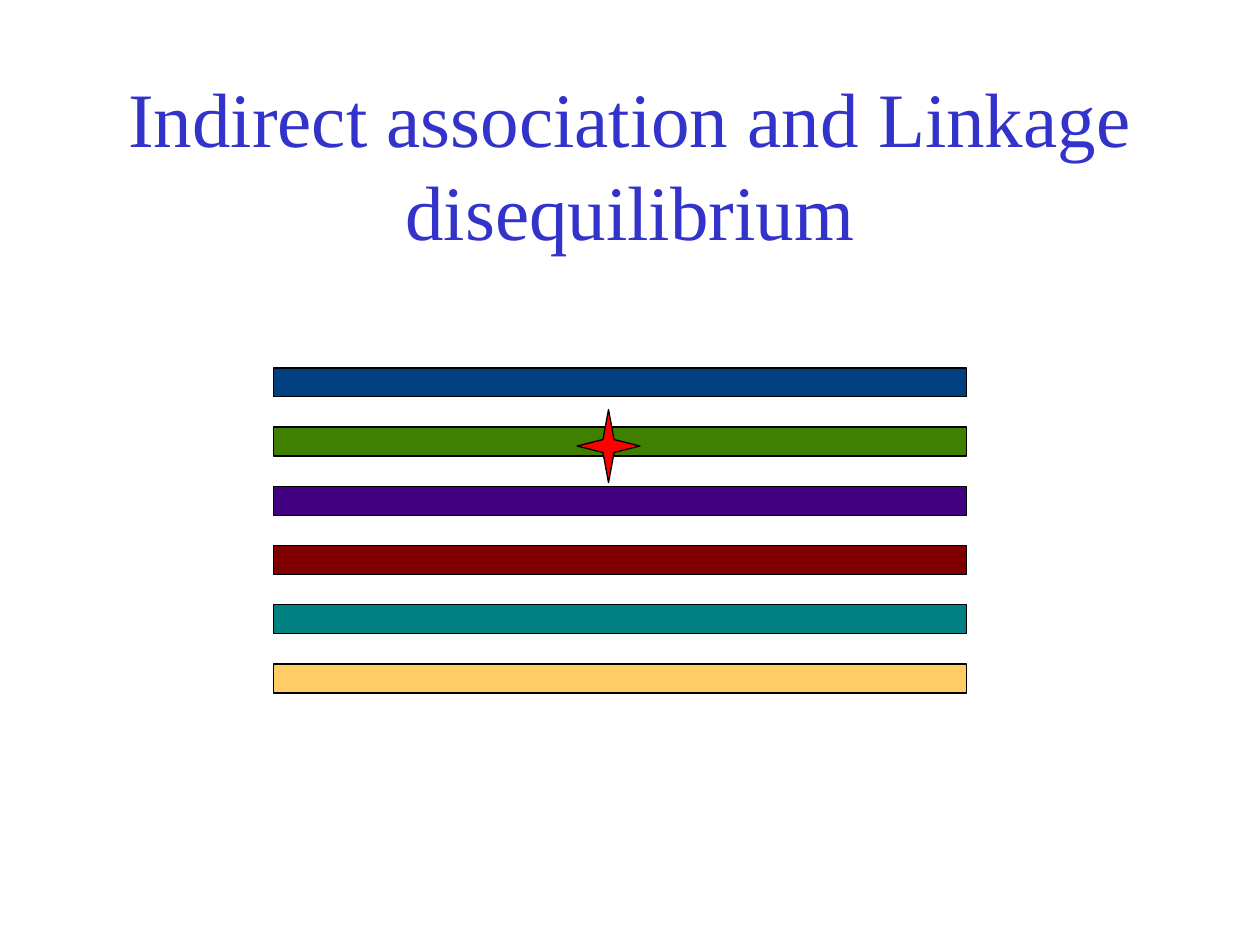
from dataclasses import dataclass

import pptx
import pptx.dml.color
import pptx.enum.shapes
import pptx.enum.text
import pptx.util

COLORS = {
    "title": "3333CC",
    "outline": "000000",
    "background": "FFFFFF",
    "blue": "004080",
    "green": "408000",
    "purple": "400080",
    "maroon": "800000",
    "teal": "008080",
    "yellow": "FFCC66",
    "mutation": "FF0000",
}
FONT = "Times New Roman"
BAR_LEFT, BAR_TOP = 2.17, 2.92
BAR_WIDTH, BAR_HEIGHT = 5.5, 0.23
ROW_PITCH = 0.47
HAPLOTYPES = ("blue", "green", "purple", "maroon", "teal", "yellow")
SHAPES = pptx.enum.shapes.MSO_SHAPE


@dataclass(frozen=True)
class Box:
    left: float
    top: float
    width: float
    height: float

    def lengths(self) -> list[pptx.util.Length]:
        return [pptx.util.Inches(value) for value in
                (self.left, self.top, self.width, self.height)]


def color(name: str) -> pptx.dml.color.RGBColor:
    return pptx.dml.color.RGBColor.from_string(COLORS[name])


def write_text(shape, text: str, *, size: float, color_name: str) -> None:
    frame = shape.text_frame
    frame.word_wrap = True
    frame.auto_size = pptx.enum.text.MSO_AUTO_SIZE.NONE
    frame.vertical_anchor = pptx.enum.text.MSO_ANCHOR.MIDDLE
    paragraph = frame.paragraphs[0]
    paragraph.alignment = pptx.enum.text.PP_ALIGN.CENTER
    paragraph.line_spacing = 1.0
    run = paragraph.add_run()
    run.text = text
    run.font.name = FONT
    run.font.size = pptx.util.Pt(size)
    run.font.color.rgb = color(color_name)


def draw_shape(slide, kind: SHAPES, box: Box, fill: str):
    shape = slide.shapes.add_shape(kind, *box.lengths())
    shape.shadow.inherit = False
    shape.fill.solid()
    shape.fill.fore_color.rgb = color(fill)
    shape.line.color.rgb = color("outline")
    shape.line.width = pptx.util.Pt(0.75)
    return shape


def main() -> None:
    presentation = pptx.Presentation()
    presentation.slide_width = pptx.util.Inches(10)
    presentation.slide_height = pptx.util.Inches(7.5)
    slide = presentation.slides.add_slide(
        presentation.slide_layouts.get_by_name("Title Only"))
    slide.background.fill.solid()
    slide.background.fill.fore_color.rgb = color("background")

    title = slide.shapes.title
    title.left, title.top, title.width, title.height = Box(
        0.75, 0.67, 8.5, 1.25).lengths()
    write_text(title, "Indirect association and Linkage disequilibrium",
               size=44, color_name="title")

    for row, haplotype in enumerate(HAPLOTYPES):
        bar = Box(BAR_LEFT, BAR_TOP + row * ROW_PITCH, BAR_WIDTH, BAR_HEIGHT)
        draw_shape(slide, SHAPES.RECTANGLE, bar, haplotype)

    mutation = draw_shape(slide, SHAPES.STAR_4_POINT,
                          Box(4.58, 3.25, 0.5, 0.58), "mutation")
    mutation.adjustments[0] = 0.125

    presentation.save("out.pptx")


if __name__ == "__main__":
    main()
